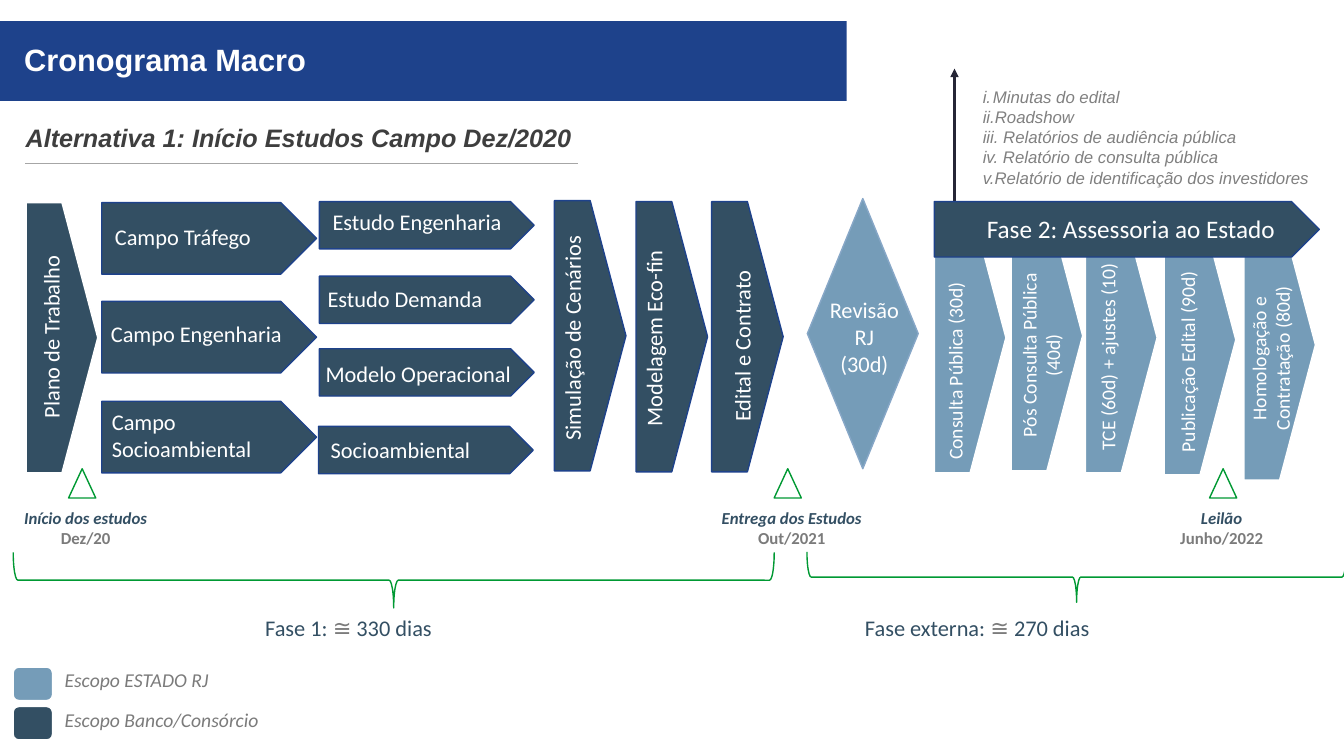
"""Build the macro schedule slide with its two phases, milestones and legend."""
from lxml import etree
from pptx import Presentation
from pptx.dml.color import RGBColor
from pptx.enum import shapes, text
from pptx.oxml import ns
from pptx.util import Pt

COLORS = {
    "navy": "1E428B", "slate": "334F63", "sky": "759CB8", "edge": "87A7C7",
    "white": "FFFFFF", "green": "009933", "gray": "7B7B7B", "list": "808080",
    "rule": "A6A6A6", "ink": "3E3E3E", "arrow": "262636",
}
TITLE = "Cronograma Macro"
SUBTITLE = "Alternativa 1: Início Estudos Campo Dez/2020"

# name lines, plate left, plate top, label centre x, centre y, label length
STUDY_STAGES = [
    (["Plano de Trabalho"], 18.7, 144.7, 36.4, 240.8, 126, "white"),
    (["Simulação de Cenários"], 396, 143.3, 408.6, 241.6, 154.8, "navy"),
    (["Modelagem Eco-fin"], 454.3, 144, 466.9, 241.6, 139, "navy"),
    (["Edital e Contrato"], 508.3, 144, 529.9, 247.3, 118, "navy"),
]
STATE_STAGES = [
    (["Consulta Pública (30d)"], 667.4, 144.7, 682.2, 265, 136, "white"),
    (["Pós Consulta Pública", "(40d)"], 722.2, 143.3, 743.4, 253.8, 129, "white"),
    (["TCE (60d) + ajustes (10)"], 775.4, 144.7, 791.3, 254.9, 142.6, "white"),
    (["Publicação Edital (90d)"], 831.6, 146.2, 848.2, 258.5, 138.2, "white"),
    (["Homologação e", "Contratação (80d)"], 888.5, 149.8, 907.6, 256, 111.6, "white"),
]
# name lines, plate left, plate top, plate height, label left, label top, label width
TASKS = [
    (["Campo Tráfego"], 72.7, 144.7, 51.1, 78.5, 155.5, 107.3),
    (["Campo Engenharia"], 72.7, 215.3, 51.1, 75.6, 225.4, 131),
    (["Campo", "Socioambiental"], 72.7, 286.6, 51.1, 76.3, 288, 108.7),
    (["Estudo Engenharia"], 228.2, 144, 33.8, 234, 145.4, 129.6),
    (["Estudo Demanda"], 228.2, 197.3, 33.8, 230.4, 200.2, 119.5),
    (["Modelo Operacional"], 228.2, 249.1, 33.8, 229, 253.4, 141.8),
    (["Socioambiental"], 227.5, 304.6, 33.8, 232.6, 308.2, 108.7),
]
DELIVERABLES = [
    "Minutas do edital", "Roadshow", " Relatórios de audiência pública",
    " Relatório de consulta pública", "Relatório de identificação dos investidores",
]
# event, date, triangle left, label left, label width
MILESTONES = [
    ("Início dos estudos", "Dez/20", 49, 12.2, 98),
    ("Entrega dos Estudos", "Out/2021", 553, 511.2, 108.7),
    ("Leilão", "Junho/2022", 864, 838.8, 67.7),
]
# name, duration, brace centre x, centre y, depth, span, label left, label width
PHASES = [
    ("Fase 1: ", " 330 dias", 281.2, 414.4, 39.6, 543.6, 185.8, 126.7),
    ("Fase externa: ", " 270 dias", 769, 412.2, 36, 385.2, 614.2, 169.2),
]
LEGEND = [("Escopo ESTADO RJ", "sky", 476.6), ("Escopo Banco/Consórcio", "slate", 504.7)]

PLATE_WIDTH, PLATE_HEIGHT, TASK_WIDTH = 51.1, 193, 153.4
SHAPE = shapes.MSO_SHAPE
CENTER = text.PP_ALIGN.CENTER

presentation = Presentation()
presentation.slide_width, presentation.slide_height = Pt(960), Pt(540)
slide = presentation.slides.add_slide(presentation.slide_layouts[5])


def color(name):
    return RGBColor.from_string(COLORS[name])


def add_shape(kind, left, top, width, height, fill=None, line=None):
    shape = slide.shapes.add_shape(kind, Pt(left), Pt(top), Pt(width), Pt(height))
    shape.shadow.inherit = False
    if fill:
        shape.fill.solid()
        shape.fill.fore_color.rgb = color(fill)
    else:
        shape.fill.background()
    if line:
        shape.line.color.rgb = color(line)
        shape.line.width = Pt(1)
    else:
        shape.line.fill.background()
    return shape


def add_line(start, end, tone, width):
    points = [Pt(value) for value in (*start, *end)]
    connector = slide.shapes.add_connector(shapes.MSO_CONNECTOR.STRAIGHT, *points)
    connector.line.color.rgb = color(tone)
    connector.line.width = Pt(width)
    etree.SubElement(connector.element.spPr, ns.qn("a:effectLst"))
    return connector


def write(lines, left, top, width, height, box=None, size=16, font="Calibri",
          tone="white", bold=False, italic=False, align=text.PP_ALIGN.LEFT,
          anchor=text.MSO_ANCHOR.TOP, margin=3.6, wrap=False, rotation=0, numbering=None):
    """Write lines; each is a string or a list of (text, colour, italic) runs."""
    box = box or slide.shapes.add_textbox(0, 0, 0, 0)
    box.left, box.top, box.width, box.height = Pt(left), Pt(top), Pt(width), Pt(height)
    box.rotation = rotation
    frame = box.text_frame
    frame.word_wrap = wrap
    frame.auto_size = text.MSO_AUTO_SIZE.NONE if wrap else text.MSO_AUTO_SIZE.SHAPE_TO_FIT_TEXT
    frame.vertical_anchor = anchor
    frame.margin_left = frame.margin_right = frame.margin_top = frame.margin_bottom = Pt(margin)
    for index, line in enumerate(lines):
        paragraph = frame.add_paragraph() if index else frame.paragraphs[0]
        paragraph.alignment = align
        paragraph.space_before = Pt(0)
        if numbering:
            properties = paragraph._p.get_or_add_pPr()
            properties.set("marL", str(Pt(7.2)))
            properties.set("indent", str(-Pt(7.2)))
            etree.SubElement(properties, ns.qn("a:buAutoNum"), type=numbering)
        runs = [(line, tone, italic)] if isinstance(line, str) else line
        for words, run_tone, slanted in runs:
            run = paragraph.add_run()
            run.text = words
            run.font.name, run.font.size = font, Pt(size)
            run.font.bold, run.font.italic = bold, slanted
            run.font.color.rgb = color(run_tone)


def add_stages(stages, fill, size):
    for lines, left, top, center_x, center_y, length, edge in stages:
        add_shape(SHAPE.PENTAGON, left, top, PLATE_WIDTH, PLATE_HEIGHT, fill, edge)
        height = 7.2 + 1.21 * size * len(lines)
        write(lines, center_x - length / 2, center_y - height / 2, length, height,
              size=size, align=CENTER, rotation=270)


add_shape(SHAPE.RECTANGLE, 0, 15.1, 604.8, 56.9, "navy")
slide.shapes.element.append(slide.shapes.title.element)
write([TITLE], 14.4, 25.9, 209.5, 32.4, box=slide.shapes.title, size=22, font="Arial",
      bold=True, margin=2.9)
write([SUBTITLE], 14.7, 84.2, 412, 28.8, size=18, font="Arial", tone="ink", bold=True, italic=True)
add_line((18, 116.6), (412.6, 116.6), "rule", 0.75)

arrow = add_line((681.8, 151.2), (681.8, 49), "arrow", 2)
etree.SubElement(arrow.line._get_or_add_ln(), ns.qn("a:tailEnd"), type="triangle")
write(DELIVERABLES, 702, 59, 252, 77.8, size=12, font="Arial", tone="list", italic=True,
      anchor=text.MSO_ANCHOR.MIDDLE, margin=0, wrap=True, numbering="romanLcPeriod")

add_stages(STUDY_STAGES, "slate", 16)
for lines, left, top, height, label_left, label_top, label_width in TASKS:
    add_shape(SHAPE.PENTAGON, left, top, TASK_WIDTH, height, "slate", "navy")
    write(lines, label_left, label_top, label_width, 7.2 + 19.4 * len(lines))

add_shape(SHAPE.FLOWCHART_DECISION, 576.7, 141.8, 79.2, PLATE_HEIGHT, "sky", "edge")
write(["Revisão", "RJ", "(30d)"], 586.8, 208.1, 61.2, 65.5, align=CENTER)

add_stages(STATE_STAGES, "sky", 14)
add_shape(SHAPE.PENTAGON, 667.4, 144, 275, 39.6, "slate", "navy")
write(["Fase 2: Assessoria ao Estado"], 701.3, 149, 216, 28.8, size=18)

for event, date, left, label_left, label_width in MILESTONES:
    add_shape(SHAPE.ISOSCELES_TRIANGLE, left, 334.8, 19.4, 20.9, "white", "green")
    write([[(event, "slate", True)], [(date, "gray", False)]],
          label_left, 359.3, label_width, 36, size=12, bold=True, align=CENTER)

for name, duration, center_x, center_y, depth, span, label_left, label_width in PHASES:
    brace = add_shape(SHAPE.RIGHT_BRACE, center_x - depth / 2, center_y - span / 2,
                      depth, span, line="green")
    brace.rotation = 90
    write([[(name, "slate", False), ("≅", "gray", False), (duration, "slate", False)]],
          label_left, 434.9, label_width, 26.6)

for label, fill, top in LEGEND:
    add_shape(SHAPE.ROUNDED_RECTANGLE, 9.4, top, 28.1, 23.8, fill, "white")
    write([label], 42.5, top - 2.9, 152.6, 24.5, size=14, tone="gray", italic=True)

presentation.save("out.pptx")
